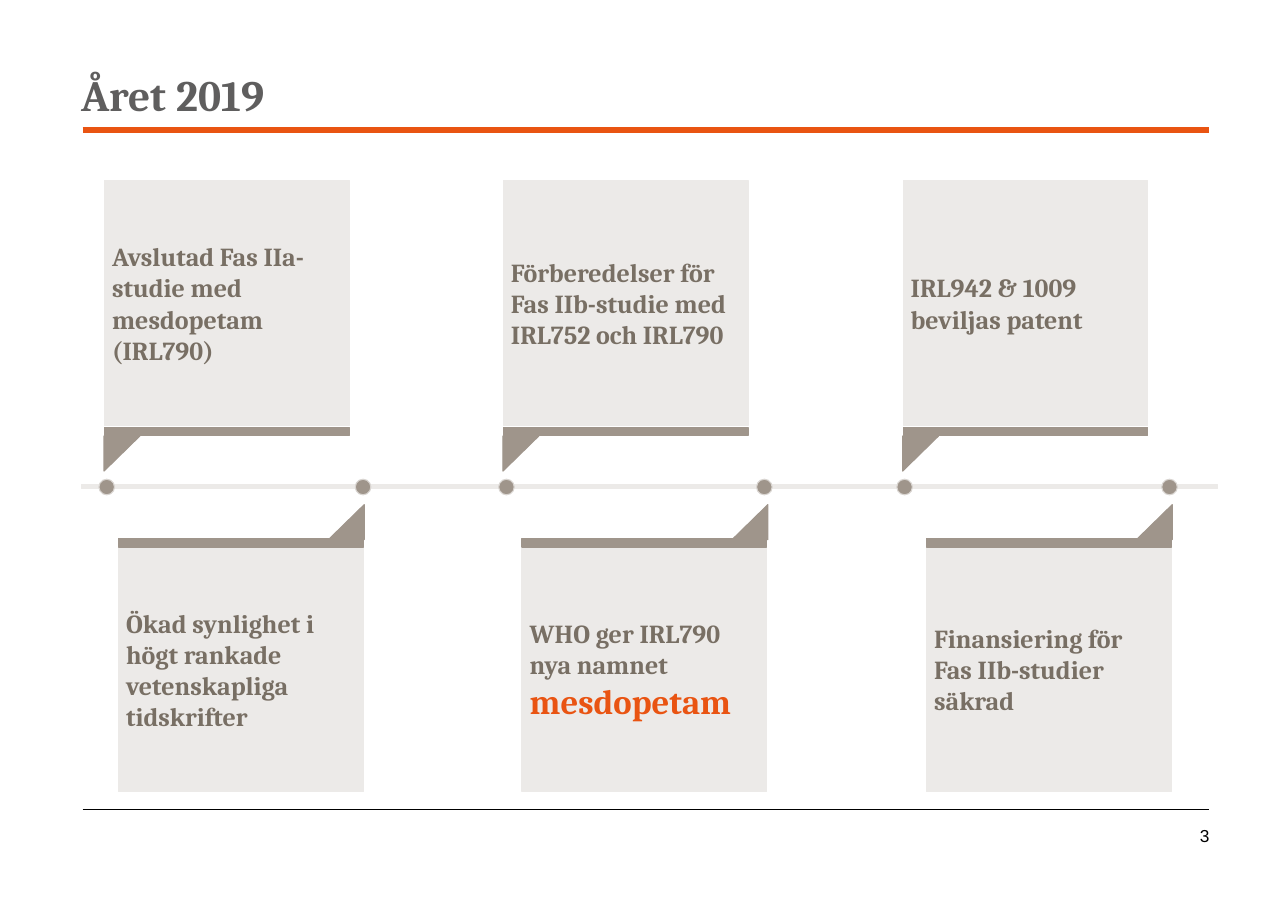
from dataclasses import dataclass

from pptx import Presentation
from pptx.dml.color import RGBColor
from pptx.enum.shapes import MSO_CONNECTOR, MSO_SHAPE as SHAPE
from pptx.enum.text import MSO_ANCHOR as ANCHOR, PP_ALIGN as ALIGN
from pptx.oxml.ns import qn
from pptx.shapes.autoshape import Shape
from pptx.slide import Slide
from pptx.text.text import _Run as Run
from pptx.util import Pt
from lxml import etree

PX = 9144  # 100 px to the inch
ORANGE, GREY, BROWN = "E95412", "5F5E5E", "786F64"
LIGHT, TAUPE, DOT_EDGE, BLACK = "ECEAE8", "9F958B", "D9D5D1", "000000"

CARD, BAR, DOT = 314, 11, 20
POINTER_W, POINTER_H = 45, 46
UPPER_CARD_TOP, UPPER_BAR_TOP, UPPER_POINTER_TOP = 232, 548, 559
LOWER_CARD_TOP, LOWER_BAR_TOP, LOWER_POINTER_TOP = 702, 691, 647
DOT_TOP = 615


@dataclass(frozen=True)
class Line:
    text: str
    size: int = 24
    color: str = BROWN


@dataclass(frozen=True)
class Milestone:
    left: int
    dot_left: int
    above: bool
    lines: tuple[Line, ...]


MILESTONES = (
    Milestone(134, 127, True, (Line("Avslutad Fas IIa-studie med mesdopetam (IRL790)"),)),
    Milestone(152, 456, False, (Line("Ökad synlighet i högt rankade vetenskapliga tidskrifter"),)),
    Milestone(646, 640, True, (Line("Förberedelser för Fas IIb-studie med IRL752 och IRL790"),)),
    Milestone(670, 971, False, (Line("WHO ger IRL790 nya namnet"), Line("mesdopetam", 32, ORANGE))),
    Milestone(1159, 1151, True, (Line("IRL942 & 1009 beviljas patent"),)),
    Milestone(1189, 1491, False, (Line("Finansiering för"), Line("Fas IIb-studier säkrad"))),
)


def rgb(color: str) -> RGBColor:
    return RGBColor.from_string(color)


def style_run(r: Run, size: int, color: str, name: str = "Cambria", bold: bool = True) -> None:
    r.font.size, r.font.name, r.font.bold = Pt(size), name, bold
    r.font.color.rgb = rgb(color)


def add_block(s: Slide, kind: SHAPE, left: int, top: int, width: int, height: int,
              fill: str, edge: str = "") -> Shape:
    sp = s.shapes.add_shape(kind, left * PX, top * PX, width * PX, height * PX)
    sp.shadow.inherit = False
    sp.fill.solid()
    sp.fill.fore_color.rgb = rgb(fill)
    sp.line.color.rgb = rgb(edge or fill)
    sp.line.width = Pt(1)
    return sp


def add_rule(s: Slide, top: int, color: str, width: int) -> None:
    rule = s.shapes.add_connector(MSO_CONNECTOR.STRAIGHT, 106 * PX, top * PX, 1551 * PX, top * PX)
    rule.line.color.rgb = rgb(color)
    rule.line.width = Pt(width)
    etree.SubElement(rule._element.spPr, qn("a:effectLst"))


def add_title(s: Slide, text: str) -> None:
    title = s.shapes.title
    title.left, title.top, title.width, title.height = 105 * PX, 19 * PX, 1445 * PX, 136 * PX
    tf = title.text_frame
    tf.margin_left = tf.margin_top = tf.margin_right = tf.margin_bottom = 0
    tf.vertical_anchor = ANCHOR.BOTTOM
    p = tf.paragraphs[0]
    p.alignment, p.line_spacing = ALIGN.LEFT, 0.9
    r = p.add_run()
    r.text = text
    style_run(r, 40, GREY)


def add_slide_number(s: Slide, number: int) -> None:
    box = s.shapes.add_textbox(1443 * PX, 1041 * PX, 119 * PX, 62 * PX)
    tf = box.text_frame
    tf.word_wrap, tf.vertical_anchor = True, ANCHOR.MIDDLE
    p = tf.paragraphs[0]
    p.alignment = ALIGN.RIGHT
    r = p.add_run()
    r.text = str(number)
    style_run(r, 16, BLACK, "Arial", False)


def add_milestone(s: Slide, m: Milestone) -> None:
    """Draw a card with its bar, its pointer to the timeline and its dot."""
    if m.above:
        card_top, bar_top, pointer_top = UPPER_CARD_TOP, UPPER_BAR_TOP, UPPER_POINTER_TOP
        pointer_left, rotation = m.left, 90
    else:
        card_top, bar_top, pointer_top = LOWER_CARD_TOP, LOWER_BAR_TOP, LOWER_POINTER_TOP
        pointer_left, rotation = m.left + CARD - POINTER_W + 1, 270

    card = add_block(s, SHAPE.RECTANGLE, m.left, card_top, CARD, CARD, LIGHT)
    tf = card.text_frame
    tf.word_wrap, tf.vertical_anchor = True, ANCHOR.MIDDLE
    p = tf.paragraphs[0]
    p.alignment = ALIGN.LEFT
    for i, line in enumerate(m.lines):
        if i:
            p.add_line_break()
        r = p.add_run()
        r.text = line.text
        style_run(r, line.size, line.color)

    add_block(s, SHAPE.RECTANGLE, m.left, bar_top, CARD, BAR, TAUPE)
    pointer = add_block(s, SHAPE.RIGHT_TRIANGLE, pointer_left, pointer_top,
                        POINTER_W, POINTER_H, TAUPE)
    pointer.rotation = rotation
    add_block(s, SHAPE.OVAL, m.dot_left, DOT_TOP, DOT, DOT, TAUPE, DOT_EDGE)


def main() -> None:
    prs = Presentation()
    prs.slide_width, prs.slide_height = 1653 * PX, 1169 * PX
    s = prs.slides.add_slide(prs.slide_layouts[5])
    add_rule(s, 167, ORANGE, 5)
    add_rule(s, 1039, BLACK, 1)
    add_title(s, "Året 2019")
    add_slide_number(s, 3)
    add_block(s, SHAPE.RECTANGLE, 105, 622, 1457, 5, LIGHT)
    for m in MILESTONES:
        add_milestone(s, m)
    prs.save("out.pptx")


if __name__ == "__main__":
    main()
